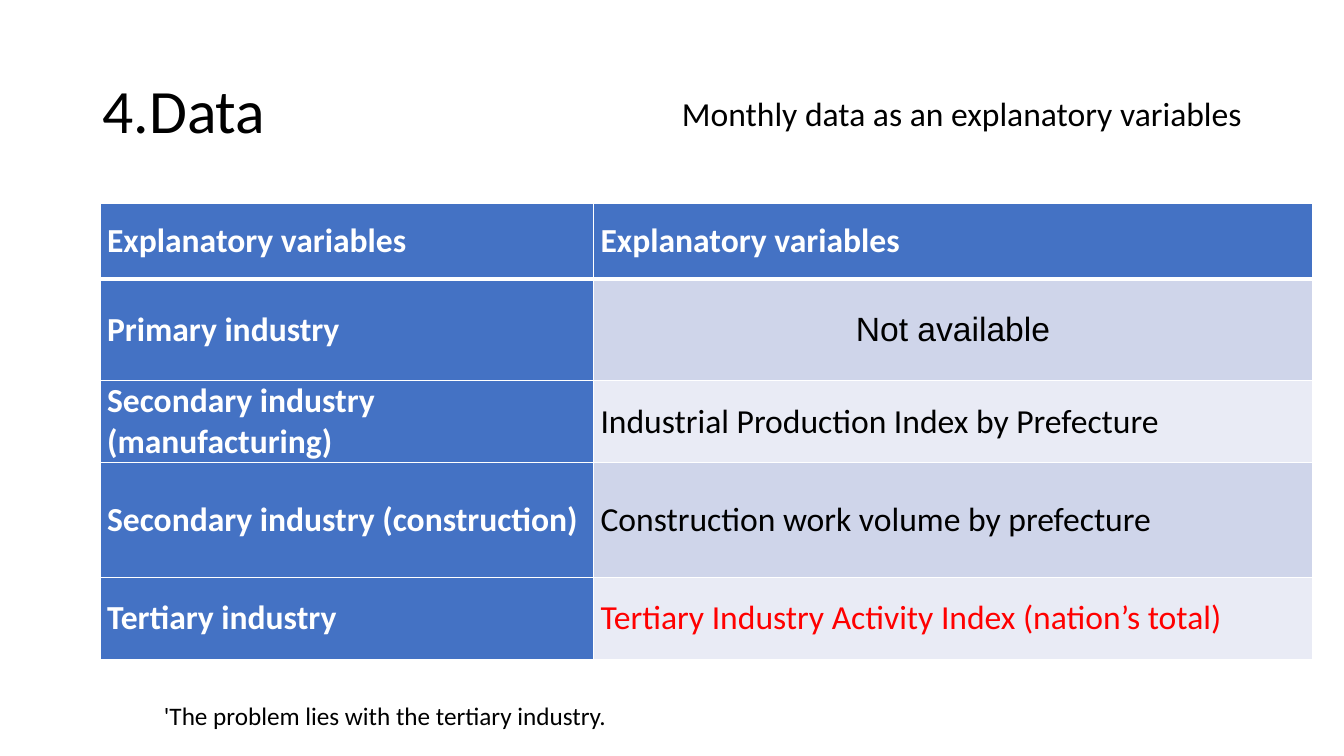
"""Build the data slide with its table of monthly variables."""
from dataclasses import dataclass

from lxml.etree import SubElement as Sub
from pptx import Presentation as Deck
from pptx.dml.color import RGBColor as Color
from pptx.enum.text import MSO_ANCHOR as Anchor, PP_ALIGN as Align
from pptx.oxml.ns import qn
from pptx.util import Pt


@dataclass(frozen=True)
class Theme:
    font: str = "Calibri"
    plain: str = "Arial"
    ink: str = "000000"
    white: str = "FFFFFF"
    red: str = "FF0000"
    blue: str = "4472C4"
    bands: tuple = ("CFD5EA", "E9EBF5")
    title: int = 44
    body: int = 24
    note: int = 18


class Maker:
    def __init__(self, deck, theme):
        self.theme = theme
        self.slide = deck.slides.add_slide(deck.slide_layouts[5])

    def style(self, frame, size, color, bold=False, face=None, align=Align.LEFT):
        for para in frame.paragraphs:
            para.alignment = align
            for run in para.runs:
                font = run.font
                font.name = face or self.theme.font
                font.size = Pt(size)
                font.bold = bold
                font.color.rgb = Color.from_string(color)

    def place(self, shape, box):
        shape.left, shape.top, shape.width, shape.height = map(Pt, box)

    def title(self, text, box):
        shape = self.slide.shapes.title
        self.place(shape, box)
        frame = shape.text_frame
        frame.text = text
        frame.word_wrap = True
        frame.vertical_anchor = Anchor.MIDDLE
        frame.paragraphs[0].line_spacing = 0.9
        self.style(frame, self.theme.title, self.theme.ink)

    def label(self, text, box, size):
        frame = self.slide.shapes.add_textbox(*map(Pt, box)).text_frame
        frame.text = text
        frame.word_wrap = True
        self.style(frame, size, self.theme.ink)

    def edges(self, cell, base):
        props = cell._tc.get_or_add_tcPr()
        widths = {"L": 1, "R": 1, "T": 1, "B": base}
        for spot, (side, width) in enumerate(widths.items()):
            line = Sub(props, qn(f"a:ln{side}"), w=str(Pt(width)))
            fill = Sub(line, qn("a:solidFill"))
            Sub(fill, qn("a:srgbClr"), val=self.theme.white)
            props.insert(spot, line)

    def cell(self, cell, text, fill, base, **look):
        cell.text = text
        cell.vertical_anchor = Anchor.MIDDLE
        cell.margin_left = cell.margin_right = Pt(5)
        cell.margin_top = cell.margin_bottom = 0
        cell.fill.solid()
        cell.fill.fore_color.rgb = Color.from_string(fill)
        self.edges(cell, base)
        self.style(cell.text_frame, self.theme.body, **look)

    def table(self, rows, spot, widths, heights, looks):
        theme = self.theme
        size = sum(widths), sum(heights)
        table = self.slide.shapes.add_table(
            len(rows), len(widths), *map(Pt, spot + size)).table
        for col, width in zip(table.columns, widths):
            col.width = Pt(width)
        for r, (row, height) in enumerate(zip(rows, heights)):
            table.rows[r].height = Pt(height)
            for c, text in enumerate(row):
                head = r == 0 or c == 0
                fill = theme.blue if head else theme.bands[(r - 1) % 2]
                look = {"color": theme.white if head else theme.ink, "bold": head}
                look.update(looks.get((r, c), {}))
                self.cell(table.cell(r, c), text, fill, 1 if r else 3, **look)


def main():
    deck = Deck()
    deck.slide_width, deck.slide_height = Pt(960), Pt(540)
    theme = Theme()
    make = Maker(deck, theme)
    make.title("4.Data", (66, 28.75, 828, 104.4))
    rows = [
        ("Explanatory variables", "Explanatory variables"),
        ("Primary industry", "Not available"),
        ("Secondary industry (manufacturing)",
         "Industrial Production Index by Prefecture"),
        ("Secondary industry (construction)",
         "Construction work volume by prefecture"),
        ("Tertiary industry",
         "Tertiary Industry Activity Index (nation’s total)"),
    ]
    looks = {
        (1, 1): {"face": theme.plain, "align": Align.CENTER},
        (4, 1): {"color": theme.red},
    }
    make.table(rows, (71.5, 145.5), (352.5, 513.5),
               (54, 72.5, 58.5, 82, 58.5), looks)
    make.label("Monthly data as an explanatory variables",
               (480, 62.75, 433.5, 36), theme.body)
    make.label("'The problem lies with the tertiary industry.",
               (110, 497, 480, 29), theme.note)
    deck.save("out.pptx")


if __name__ == "__main__":
    main()
